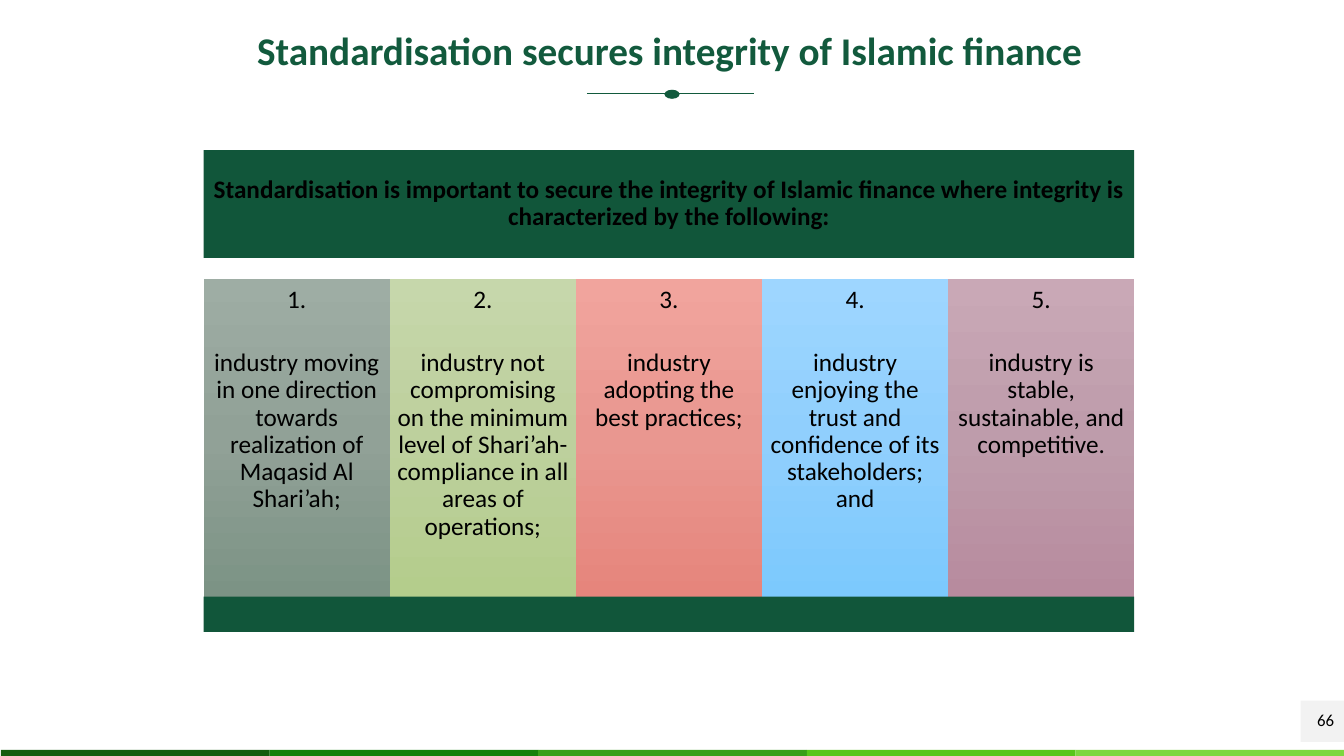
from copy import deepcopy

from lxml import etree
from pptx import Presentation
from pptx.dml.color import RGBColor
from pptx.enum.shapes import MSO_CONNECTOR, MSO_SHAPE
from pptx.enum.text import MSO_ANCHOR, PP_ALIGN
from pptx.oxml.ns import qn
from pptx.util import Inches, Pt

BLACK = RGBColor(0x00, 0x00, 0x00)
GREY = RGBColor(0xF2, 0xF2, 0xF2)
GREEN = RGBColor(0x12, 0x5A, 0x3D)
BAND = RGBColor(0x11, 0x56, 0x3A)
STRIPES = [
    RGBColor(0x15, 0x5C, 0x0E),
    RGBColor(0x16, 0x80, 0x0A),
    RGBColor(0x39, 0x9F, 0x18),
    RGBColor(0x58, 0xC6, 0x19),
    RGBColor(0x7C, 0xD7, 0x3E),
]
SAGE = [RGBColor(0x9E, 0xAD, 0xA4), RGBColor(0x91, 0xA1, 0x97), RGBColor(0x7C, 0x93, 0x85)]
LIME = [RGBColor(0xC6, 0xD7, 0xAB), RGBColor(0xBD, 0xD0, 0x9D), RGBColor(0xB4, 0xCD, 0x8C)]
CORAL = [RGBColor(0xF1, 0xA4, 0x9D), RGBColor(0xE9, 0x97, 0x90), RGBColor(0xE6, 0x85, 0x7C)]
SKY = [RGBColor(0x9E, 0xD6, 0xFF), RGBColor(0x90, 0xCF, 0xFD), RGBColor(0x7C, 0xC9, 0xFD)]
MAUVE = [RGBColor(0xC9, 0xA8, 0xB6), RGBColor(0xBE, 0x9C, 0xAB), RGBColor(0xB7, 0x8B, 0x9E)]

TITLE = "Standardisation secures integrity of Islamic finance"
HEADING = ("Standardisation is important to secure the integrity of Islamic finance "
           "where integrity is characterized by the following:")
COLUMNS = [
    ("industry moving in one direction towards realization of Maqasid Al Shari’ah;", SAGE),
    ("industry not compromising on the minimum level of Shari’ah-compliance "
     "in all areas of operations;", LIME),
    ("industry adopting the best practices;", CORAL),
    ("industry enjoying the trust and confidence of its stakeholders; and", SKY),
    ("industry is stable, sustainable, and competitive.", MAUVE),
]


def add_block(s, x, y, w, h, color=None, kind=MSO_SHAPE.RECTANGLE):
    sp = s.shapes.add_shape(kind, Inches(x), Inches(y), Inches(w), Inches(h))
    sp.shadow.inherit = False
    sp.line.fill.background()
    if color is not None:
        sp.fill.solid()
        sp.fill.fore_color.rgb = color
    return sp


def fill_gradient(sp, colors):
    sp.fill.gradient()
    sp.fill.gradient_angle = 270
    stops = sp._element.spPr.find(".//" + qn("a:gsLst"))
    stops.insert(1, deepcopy(stops[0]))
    for stop, position, color in zip(sp.fill.gradient_stops, (0, 0.5, 1), colors):
        stop.position = position
        stop.color.rgb = color


def set_text(sp, lines, size=18, bold=False, color=BLACK, align=PP_ALIGN.CENTER,
             anchor=MSO_ANCHOR.MIDDLE, margin=0.07, gap=0):
    tf = sp.text_frame
    frame = {"word_wrap": True, "vertical_anchor": anchor}
    for side in ("left", "right", "top", "bottom"):
        frame["margin_" + side] = Inches(margin)
    for name, value in frame.items():
        setattr(tf, name, value)
    for i, line in enumerate(lines):
        p = tf.add_paragraph() if i else tf.paragraphs[0]
        p.alignment = align
        p.line_spacing = 0.9
        if i:
            p.space_before = Pt(gap)
        r = p.add_run()
        r.text = line
        font = {"name": "Calibri", "size": Pt(size), "bold": bold}
        for name, value in font.items():
            setattr(r.font, name, value)
        r.font.color.rgb = color


def add_title(s, x, y, w, h):
    sp = s.shapes.title
    box = {"left": x, "top": y, "width": w, "height": h}
    for name, value in box.items():
        setattr(sp, name, Inches(value))
    set_text(sp, [TITLE], size=28, bold=True, color=GREEN, margin=0.05)


def add_ornament(s, x, y, w):
    line = s.shapes.add_connector(MSO_CONNECTOR.STRAIGHT, Inches(x), Inches(y),
                                  Inches(x + w), Inches(y))
    line.line.color.rgb = GREEN
    line.line.width = Pt(0.75)
    etree.SubElement(line._element.spPr, qn("a:effectLst"))
    add_block(s, x + w / 2 - 0.06, y - 0.04, 0.15, 0.09, GREEN, MSO_SHAPE.OVAL)


def add_footer(s, x, y, w, h):
    stripe_w = w / len(STRIPES)
    for i, color in enumerate(STRIPES):
        add_block(s, x + i * stripe_w, y, stripe_w, h, color)


def add_page_number(s, x, y, w, h):
    sp = add_block(s, x, y, w, h, GREY)
    set_text(sp, ["66"], size=12, align=PP_ALIGN.RIGHT, margin=0.1)


def add_panel(s, x, y, w, h):
    head_h, gap, base_h = 1.07, 0.21, 0.35
    body_y = y + head_h + gap
    body_h = h - head_h - gap - base_h
    col_w = w / len(COLUMNS)
    set_text(add_block(s, x, y, w, head_h, BAND), [HEADING], bold=True)
    for i, (text, colors) in enumerate(COLUMNS):
        sp = add_block(s, x + i * col_w, body_y, col_w, body_h)
        fill_gradient(sp, colors)
        set_text(sp, [f"{i + 1}.", text], anchor=MSO_ANCHOR.TOP, gap=26)
    add_block(s, x, body_y + body_h, w, base_h, BAND)


def main():
    prs = Presentation()
    prs.slide_width = Inches(13.33)
    prs.slide_height = Inches(7.5)
    s = prs.slides.add_slide(prs.slide_layouts[5])
    add_footer(s, 0.01, 7.44, 13.32, 0.06)
    add_page_number(s, 12.9, 6.95, 0.43, 0.41)
    add_ornament(s, 5.82, 0.93, 1.66)
    add_title(s, 0.71, 0.26, 11.86, 0.52)
    add_panel(s, 2.02, 1.49, 9.23, 4.78)
    prs.save("out.pptx")


if __name__ == "__main__":
    main()
